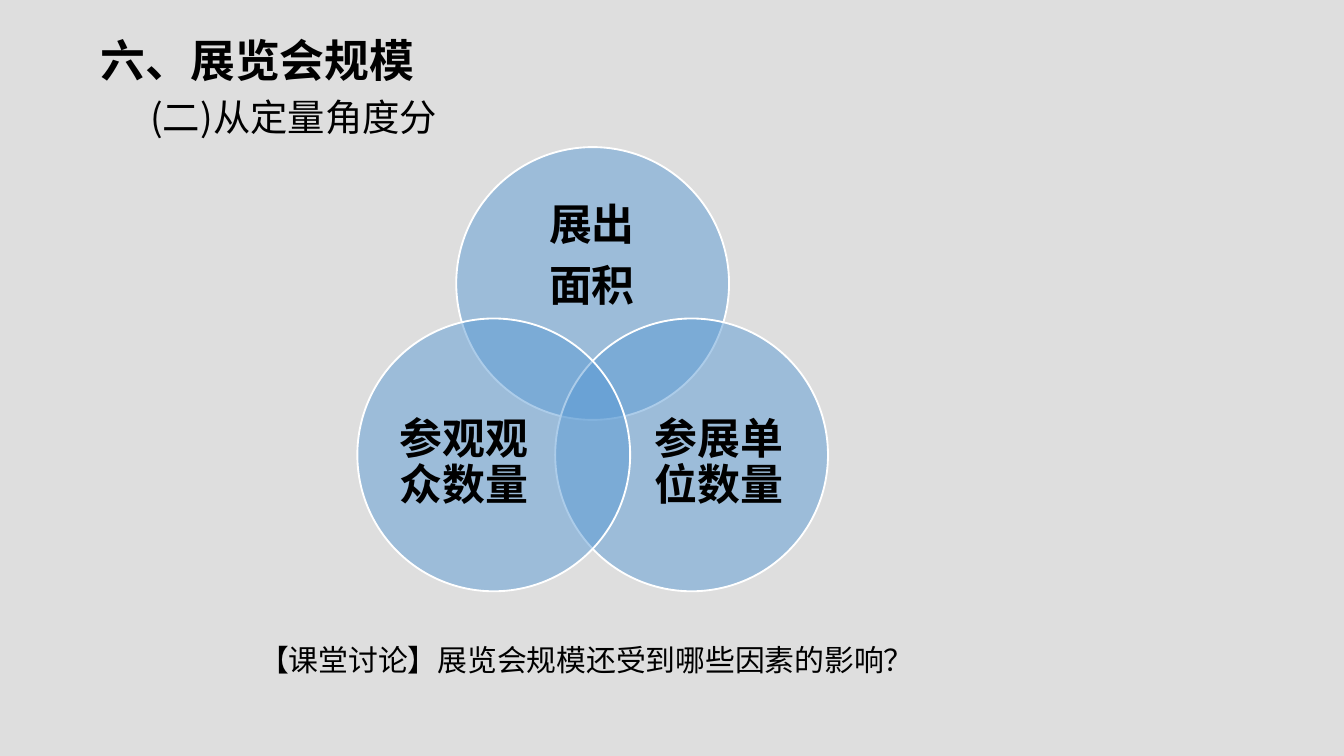
from dataclasses import dataclass
from math import cos, radians, sin

from lxml.etree import SubElement
from pptx import Presentation
from pptx.dml.color import RGBColor
from pptx.enum.shapes import MSO_SHAPE
from pptx.enum.text import MSO_ANCHOR, MSO_AUTO_SIZE, PP_ALIGN
from pptx.oxml.ns import qn
from pptx.util import Inches, Pt


@dataclass(frozen=True)
class Theme:
    background: RGBColor = RGBColor(0xDE, 0xDE, 0xDE)
    text: RGBColor = RGBColor(0, 0, 0)
    circle: RGBColor = RGBColor(0x5B, 0x9B, 0xD5)
    outline: RGBColor = RGBColor(0xFF, 0xFF, 0xFF)
    heading_font: str = "Noto Sans CJK SC"
    label_font: str = "Calibri"
    title_size: int = 24
    subtitle_size: int = 20
    label_size: int = 23
    question_size: int = 16


@dataclass(frozen=True)
class Box:
    left: float
    top: float
    width: float
    height: float

    def lengths(self) -> tuple:
        return tuple(map(Inches, (self.left, self.top, self.width, self.height)))


@dataclass(frozen=True)
class Factor:
    lines: tuple[str, ...]
    angle: int
    label_box: Box


THEME = Theme()
VENN_X, VENN_Y, VENN_RADIUS = 4.41, 2.96, 0.85
DIAMETER = 2.03
FACTORS = (
    Factor(("展出", "面积"), -90, Box(3.66, 1.45, 1.49, 0.92)),
    Factor(("参展单位数量",), 30, Box(4.74, 2.89, 1.22, 1.12)),
    Factor(("参观观众数量",), 150, Box(2.84, 2.89, 1.22, 1.12)),
)


def style_paragraph(p, font: str, size: int, bold: bool = False) -> None:
    """Format a paragraph, using one font for Latin and East Asian text."""
    p.font.size, p.font.bold, p.font.name = Pt(size), bold, font
    p.font.color.rgb = THEME.text
    def_rpr = p._p.get_or_add_pPr().find(qn("a:defRPr"))
    SubElement(def_rpr, qn("a:ea")).set("typeface", font)


def add_indented_text(slide, box: Box, text: str, size: int, indent: float):
    tf = slide.shapes.add_textbox(*box.lengths()).text_frame
    p = tf.paragraphs[0]
    p.text = text
    style_paragraph(p, THEME.heading_font, size)
    p._p.get_or_add_pPr().set("indent", str(Inches(indent)))
    return tf


def add_circle(shapes, factor: Factor) -> None:
    angle = radians(factor.angle)
    box = Box(VENN_X + VENN_RADIUS * cos(angle) - DIAMETER / 2,
              VENN_Y + VENN_RADIUS * sin(angle) - DIAMETER / 2,
              DIAMETER, DIAMETER)
    sp = shapes.add_shape(MSO_SHAPE.OVAL, *box.lengths())
    sp.shadow.inherit = False
    sp.fill.solid()
    sp.fill.fore_color.rgb = THEME.circle
    color = sp._element.spPr.find(qn("a:solidFill"))[0]
    SubElement(color, qn("a:alpha")).set("val", "50000")
    sp.line.color.rgb = THEME.outline
    sp.line.width = Pt(1)


def add_label(shapes, factor: Factor) -> None:
    tf = shapes.add_textbox(*factor.label_box.lengths()).text_frame
    tf.word_wrap = True
    tf.vertical_anchor = MSO_ANCHOR.MIDDLE
    tf.margin_left = tf.margin_right = tf.margin_top = tf.margin_bottom = 0
    tf.text = "\n".join(factor.lines)
    for p in tf.paragraphs:
        p.alignment = PP_ALIGN.CENTER
        p.line_spacing = 0.9
        p.space_after = Pt(8)
        style_paragraph(p, THEME.label_font, THEME.label_size, bold=True)


def add_title(slide, text: str) -> None:
    title = slide.shapes.title
    title.left, title.top, title.width, title.height = Box(0.65, 0.21, 8.66, 0.47).lengths()
    tf = title.text_frame
    tf.text = text
    tf.auto_size = MSO_AUTO_SIZE.NONE
    tf.vertical_anchor = MSO_ANCHOR.MIDDLE
    p = tf.paragraphs[0]
    p.alignment = PP_ALIGN.LEFT
    style_paragraph(p, THEME.heading_font, THEME.title_size, bold=True)


def main() -> None:
    prs = Presentation()
    prs.slide_width = Inches(10)
    prs.slide_height = prs.slide_width * 9 // 16
    slide = prs.slides.add_slide(prs.slide_layouts[5])
    slide.background.fill.solid()
    slide.background.fill.fore_color.rgb = THEME.background

    add_title(slide, "六、展览会规模")
    subtitle = add_indented_text(slide, Box(0.43, 0.52, 7.25, 4.4), "(二)从定量角度分",
                                 THEME.subtitle_size, 0.59)
    subtitle.word_wrap = True
    subtitle.paragraphs[0].line_spacing = 1.4

    venn = slide.shapes.add_group_shape()
    for factor in FACTORS:
        add_circle(venn.shapes, factor)
        add_label(venn.shapes, factor)

    question = add_indented_text(slide, Box(1.5, 4.72, 5.48, 0.37),
                                 "【课堂讨论】展览会规模还受到哪些因素的影响？",
                                 THEME.question_size, 0.33)
    question.word_wrap = False
    question.auto_size = MSO_AUTO_SIZE.SHAPE_TO_FIT_TEXT
    question.vertical_anchor = MSO_ANCHOR.MIDDLE
    prs.save("out.pptx")


if __name__ == "__main__":
    main()
